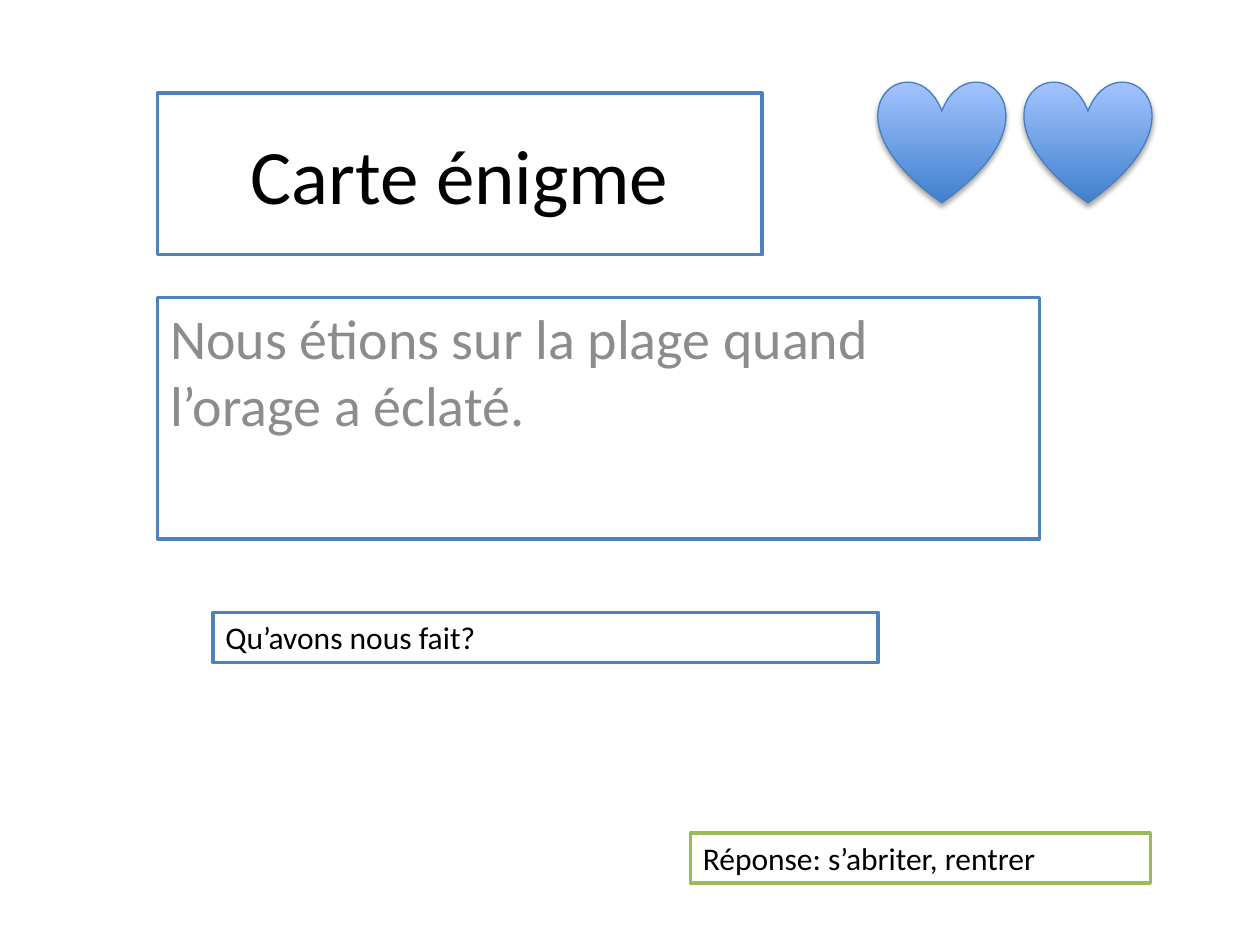
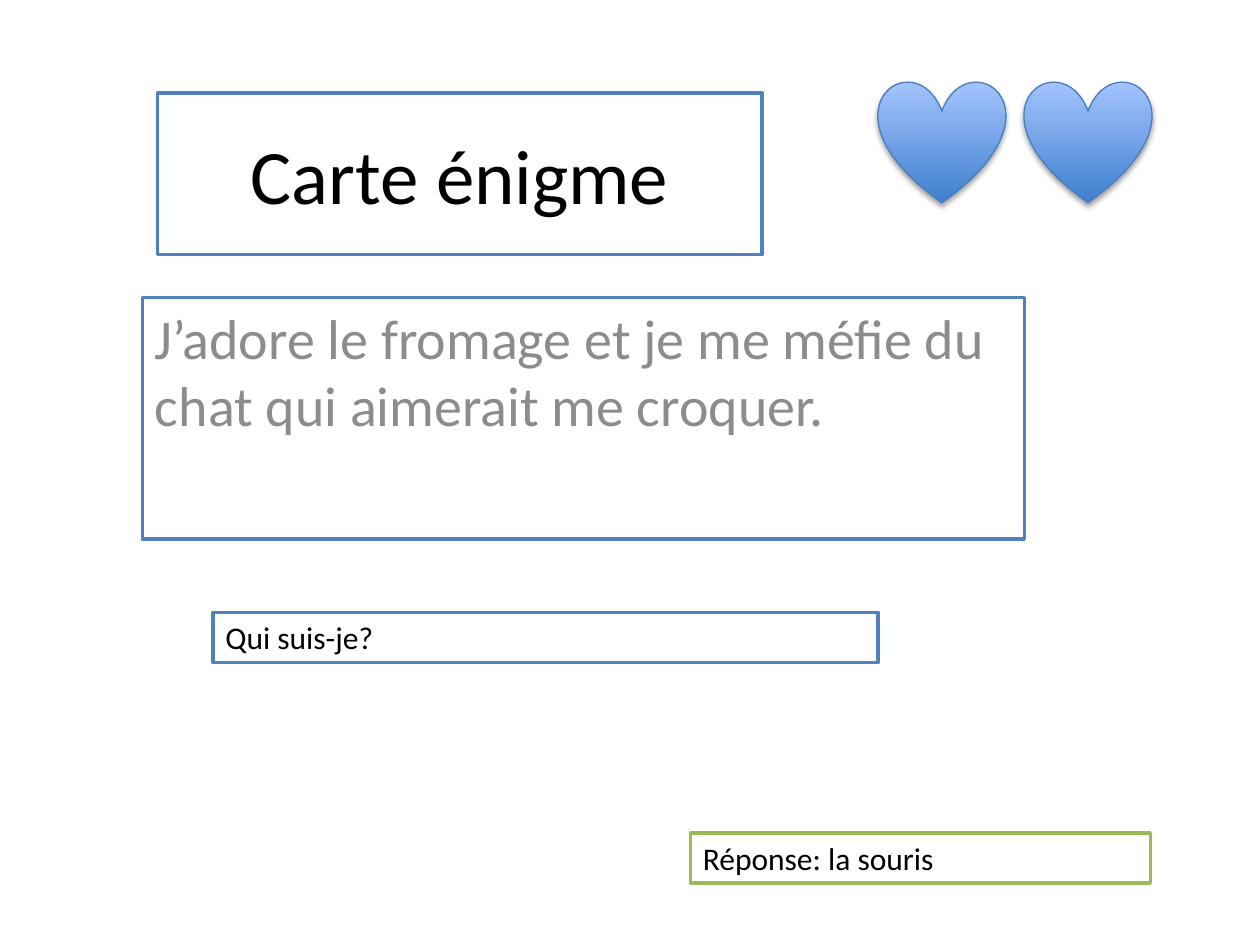
from lxml import etree
from pptx import Presentation, util as u
from pptx.dml.color import RGBColor
from pptx.enum import shapes, text
from pptx.oxml.ns import qn

BLUE, GREEN, BLACK, GREY, WHITE = "4F81BD", "9BBB59", "000000", "8C8C8C", "FFFFFF"
HEART_LINE, HEART_STOPS = "4B7EBC", ("3F80CE", "A4C4FF")
TITLE = dict(size=u.Pt(44), name="Calibri")
RIDDLE = dict(size=u.Pt(32), name="Calibri")
LABEL = dict(size=u.Pt(18), name="Calibri")
GROW = text.MSO_AUTO_SIZE.SHAPE_TO_FIT_TEXT
FIXED = text.MSO_AUTO_SIZE.NONE
TOP, MIDDLE = text.MSO_ANCHOR.TOP, text.MSO_ANCHOR.MIDDLE
LEFT, CENTER = text.PP_ALIGN.LEFT, text.PP_ALIGN.CENTER


def rgb(value):
    return RGBColor.from_string(value)


def frame(sp, box, words, font, color=BLACK, border=BLUE, fit=GROW, anchor=TOP, align=LEFT):
    sp.left, sp.top, sp.width, sp.height = [u.Inches(v) for v in box]
    sp.fill.solid()
    sp.fill.fore_color.rgb = rgb(WHITE)
    sp.line.color.rgb = rgb(border)
    sp.line.width = u.Pt(2)
    tf = sp.text_frame
    for key, value in dict(word_wrap=True, auto_size=fit, vertical_anchor=anchor).items():
        setattr(tf, key, value)
    p = tf.paragraphs[0]
    p.alignment = align
    p.space_before = u.Pt(0)
    r = p.add_run()
    r.text = words
    for key, value in font.items():
        setattr(r.font, key, value)
    r.font.color.rgb = rgb(color)


prs = Presentation()
prs.slide_width, prs.slide_height = u.Inches(10), u.Inches(7.5)

cards = [
    (1.25, "Nous étions sur la plage quand l’orage a éclaté.",
     "Qu’avons nous fait?", "Réponse: s’abriter, rentrer"),
    (1.13, "J’adore le fromage et je me méfie du chat qui aimerait me croquer.",
     "Qui suis-je?", "Réponse: la souris"),
]

for riddle_left, riddle, question, answer in cards:
    s = prs.slides.add_slide(prs.slide_layouts[0])
    frame(s.shapes.title, (1.25, 0.74, 4.8, 1.28), "Carte énigme", TITLE,
          fit=FIXED, anchor=MIDDLE, align=CENTER)
    frame(s.placeholders[1], (riddle_left, 2.36, 7, 1.92), riddle, RIDDLE, color=GREY, fit=FIXED)

    for box, words, border in [((1.69, 4.86, 5.28, 0.4), question, BLUE),
                               ((5.48, 6.61, 3.65, 0.4), answer, GREEN)]:
        sp = s.shapes.add_textbox(0, 0, 0, 0)
        frame(sp, box, words, LABEL, border=border)

    for left in (6.97, 8.13):
        heart = s.shapes.add_shape(shapes.MSO_SHAPE.HEART, u.Inches(left), u.Inches(0.64),
                                   u.Inches(1.01), u.Inches(0.97))
        heart.fill.gradient()
        heart.fill.gradient_angle = 90
        for stop, color in zip(heart.fill.gradient_stops, HEART_STOPS):
            stop.color.rgb = rgb(color)
        heart.line.color.rgb = rgb(HEART_LINE)
        heart.line.width = u.Pt(0.75)
        heart.shadow.inherit = False
        effects = heart.element.spPr.find(qn("a:effectLst"))
        shadow = etree.SubElement(effects, qn("a:outerShdw"), blurRad=str(u.Pt(3.1)),
                                  dist=str(u.Pt(1.8)), dir="5400000", rotWithShape="0")
        tint = etree.SubElement(shadow, qn("a:srgbClr"), val=BLACK)
        etree.SubElement(tint, qn("a:alpha"), val="35000")

prs.save("out.pptx")
